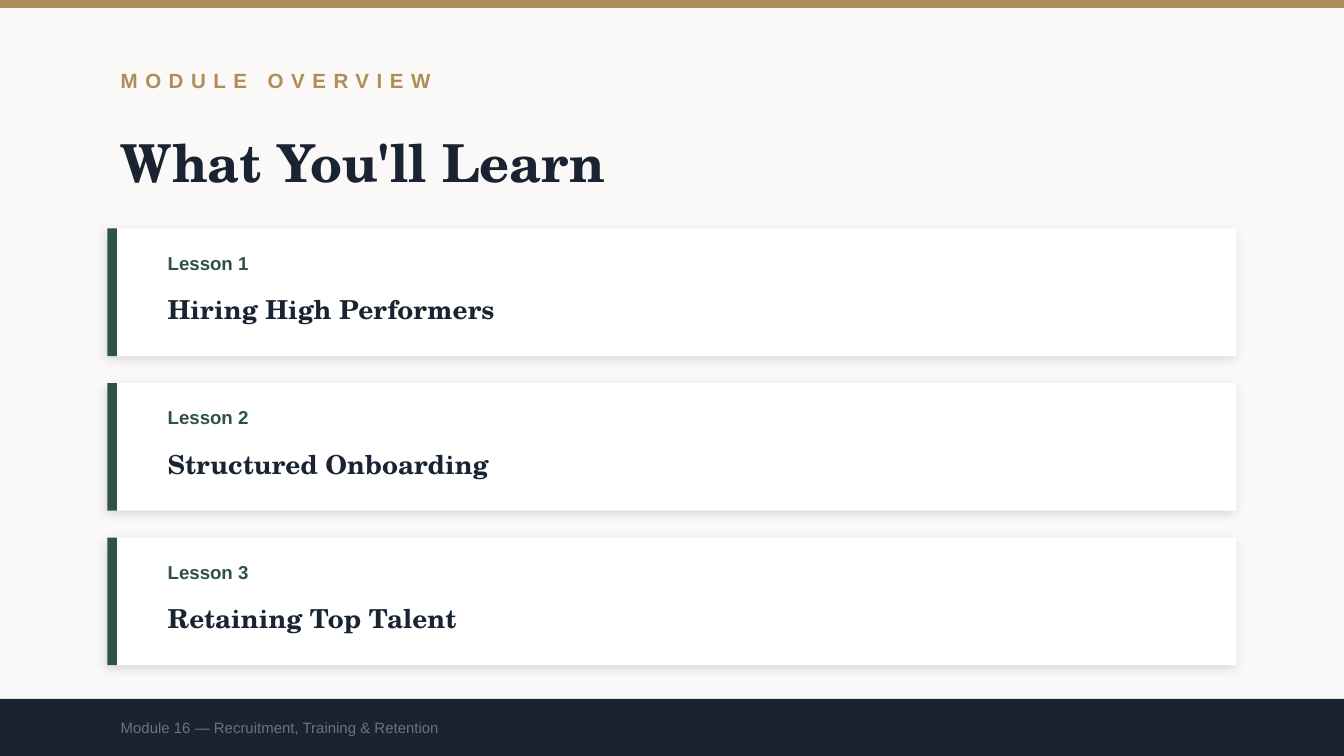
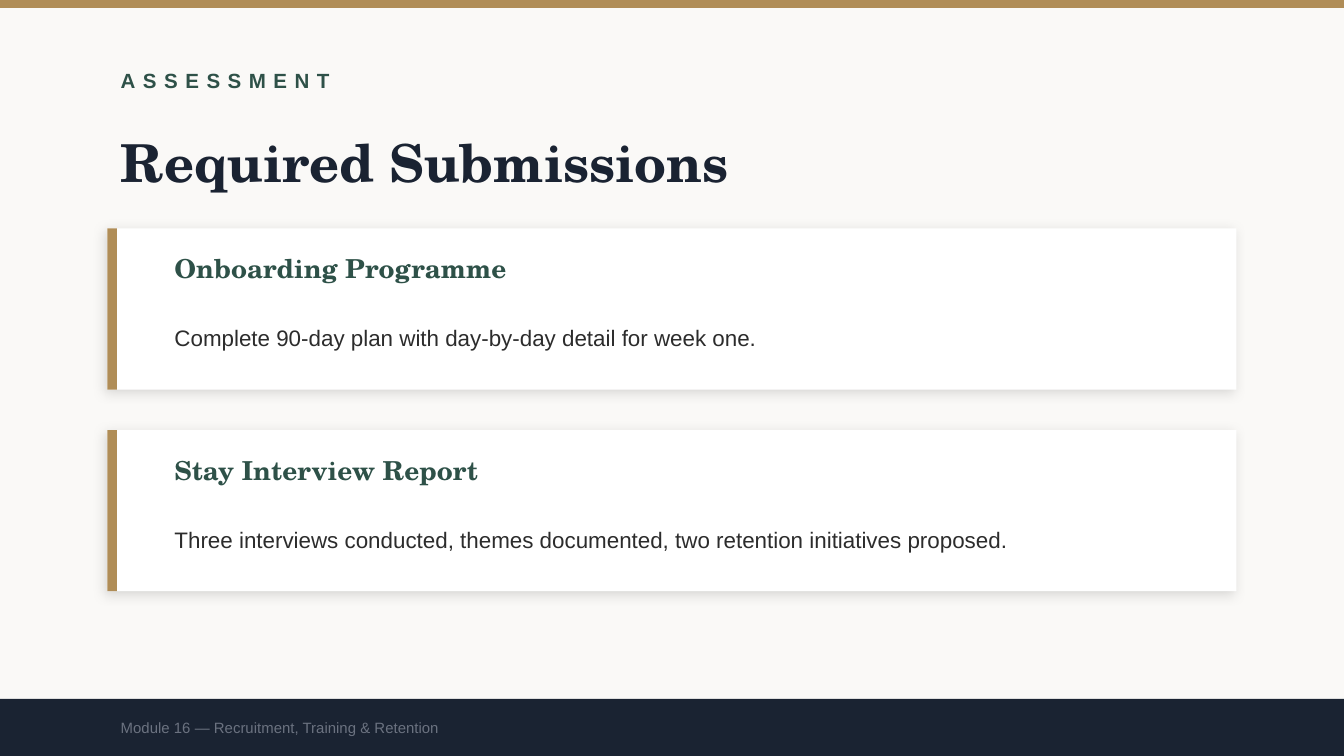
"""Build the module overview and assessment slides."""
from lxml import etree
from pptx import Presentation
from pptx import util as u
from pptx.dml.color import RGBColor
from pptx.enum import shapes, text
from pptx.oxml import ns

GOLD = RGBColor(0xB0, 0x8D, 0x57)
GREEN = RGBColor(0x2E, 0x51, 0x48)
NAVY = RGBColor(0x1A, 0x23, 0x32)
CREAM = RGBColor(0xFA, 0xF9, 0xF7)
WHITE = RGBColor(0xFF, 0xFF, 0xFF)
GREY = RGBColor(0x6B, 0x72, 0x80)
INK = RGBColor(0x2C, 0x2C, 0x2C)
SANS, SERIF = "Arial", "TeX Gyre Schola"

FOOTER = "Module 16 — Recruitment, Training & Retention"
LEFT, CARD_TOP, CARD_WIDTH, FOOTER_TOP = 0.8, 1.7, 8.4, 5.2

LESSON_LINES = [
    dict(at=(0.35, 0.08, 7, 0.35), size=10, color=GREEN, bold=True),
    dict(at=(0.35, 0.4, 7.8, 0.4), size=14, font=SERIF, color=NAVY, bold=True),
]
SUBMISSION_LINES = [
    dict(at=(0.4, 0.12, 7.7, 0.35), size=14, font=SERIF, color=GREEN, bold=True),
    dict(at=(0.4, 0.5, 7.7, 0.55), size=12, color=INK, line_spacing=1.4),
]
SLIDES = [
    dict(
        label="MODULE OVERVIEW", label_color=GOLD, title="What You'll Learn",
        accent=GREEN, height=0.95, gap=0.2, lines=LESSON_LINES,
        cards=[
            ("Lesson 1", "Hiring High Performers"),
            ("Lesson 2", "Structured Onboarding"),
            ("Lesson 3", "Retaining Top Talent"),
        ],
    ),
    dict(
        label="ASSESSMENT", label_color=GREEN, title="Required Submissions",
        accent=GOLD, height=1.2, gap=0.3, lines=SUBMISSION_LINES,
        cards=[
            ("Onboarding Programme",
             "Complete 90-day plan with day-by-day detail for week one."),
            ("Stay Interview Report",
             "Three interviews conducted, themes documented, "
             "two retention initiatives proposed."),
        ],
    ),
]


def add_text(page, words, at, size, color, font=SANS, bold=False,
             tracking=0, line_spacing=None, box=None):
    """Write one formatted line into a new text box or the given placeholder."""
    left, top, width, height = map(u.Inches, at)
    if box is None:
        box = page.shapes.add_textbox(left, top, width, height)
    else:
        box.left, box.top, box.width, box.height = left, top, width, height
    frame = box.text_frame
    frame.word_wrap = True
    frame.auto_size = text.MSO_AUTO_SIZE.NONE
    frame.vertical_anchor = text.MSO_ANCHOR.MIDDLE
    para = frame.paragraphs[0]
    para.alignment = text.PP_ALIGN.LEFT
    if line_spacing:
        para.line_spacing = line_spacing
    span = para.add_run()
    span.text = words
    span.font.name, span.font.size, span.font.bold = font, u.Pt(size), bold
    span.font.color.rgb = color
    if tracking:
        span._r.get_or_add_rPr().set("spc", str(tracking * 100))


def add_band(page, at, color):
    """Draw a plain filled rectangle."""
    band = page.shapes.add_shape(shapes.MSO_SHAPE.RECTANGLE, *map(u.Inches, at))
    band.shadow.inherit = False
    band.fill.solid()
    band.fill.fore_color.rgb = color
    band.line.fill.background()
    return band


def add_soft_shadow(shape):
    """Give a shape a faint blurred shadow."""
    effects = shape._element.spPr.find(ns.qn("a:effectLst"))
    shadow = etree.SubElement(
        effects, ns.qn("a:outerShdw"), blurRad=str(u.Pt(6)), dist=str(u.Pt(2)),
        dir=str(135 * 60000), algn="bl", rotWithShape="0")
    tint = etree.SubElement(shadow, ns.qn("a:srgbClr"), val="000000")
    etree.SubElement(tint, ns.qn("a:alpha"), val="12000")


def add_card(page, top, height, accent, words, lines):
    """Draw a white card with an accent edge and its lines of text."""
    add_soft_shadow(add_band(page, (LEFT, top, CARD_WIDTH, height), WHITE))
    add_band(page, (LEFT, top, 0.07, height), accent)
    for line, style in zip(words, lines):
        across, down, *extent = style["at"]
        at = (LEFT + across, top + down, *extent)
        add_text(page, line, **{**style, "at": at})


def add_page(deck, content):
    """Add one slide with the shared frame and its cards."""
    page = deck.slides.add_slide(deck.slide_layouts[5])
    page.background.fill.solid()
    page.background.fill.fore_color.rgb = CREAM
    add_band(page, (0, 0, 10, 0.06), GOLD)
    add_text(page, content["label"], (LEFT, 0.4, 8, 0.4), 11,
             content["label_color"], bold=True, tracking=4)
    add_text(page, content["title"], (LEFT, 0.9, 8, 0.6), 28, NAVY,
             font=SERIF, bold=True, box=page.shapes.title)
    for index, words in enumerate(content["cards"]):
        top = CARD_TOP + index * (content["height"] + content["gap"])
        add_card(page, top, content["height"], content["accent"], words,
                 content["lines"])
    footer_height = deck.slide_height.inches - FOOTER_TOP
    add_band(page, (0, FOOTER_TOP, 10, footer_height), NAVY)
    add_text(page, FOOTER, (LEFT, FOOTER_TOP, 8, footer_height), 8, GREY)


def main():
    """Build and save the deck."""
    deck = Presentation()
    deck.slide_width = u.Inches(10)
    deck.slide_height = u.Inches(10 * 9 / 16)
    for content in SLIDES:
        add_page(deck, content)
    deck.save("out.pptx")


if __name__ == "__main__":
    main()
